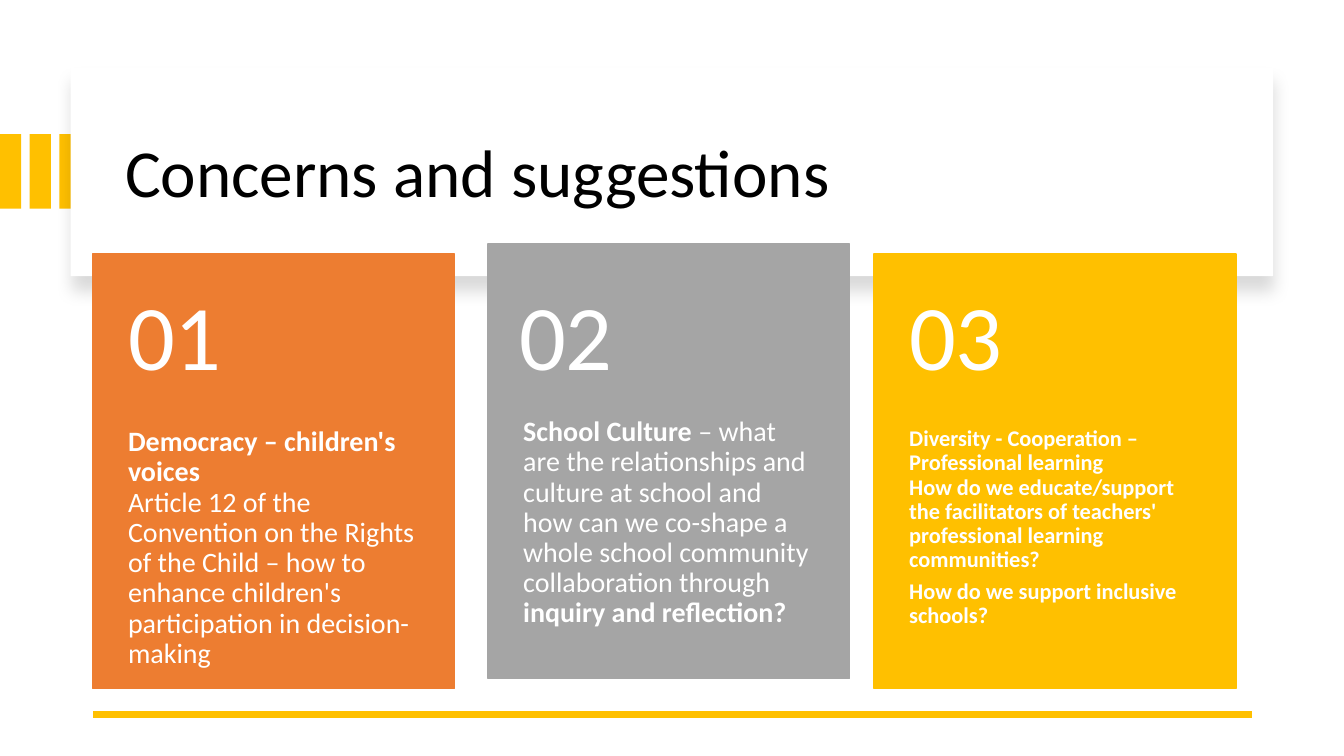
from dataclasses import dataclass

from lxml.etree import SubElement
from pptx import Presentation
from pptx.dml.color import RGBColor
from pptx.enum.shapes import MSO_CONNECTOR, MSO_SHAPE
from pptx.enum.text import MSO_ANCHOR, MSO_AUTO_SIZE, PP_ALIGN
from pptx.oxml.ns import qn
from pptx.util import Inches, Pt

WHITE = RGBColor(0xFF, 0xFF, 0xFF)
BLACK = RGBColor(0x00, 0x00, 0x00)
ORANGE = RGBColor(0xED, 0x7D, 0x31)
GRAY = RGBColor(0xA5, 0xA5, 0xA5)
GOLD = RGBColor(0xFF, 0xC0, 0x00)

FONT = "Calibri"
CELL = Inches(0.1)  # the grid has square cells, 133.33 columns by 75 rows
LINE_SPACING = 0.9
CARD_WIDTH, CARD_HEIGHT = 35.9, 43.1
NUMBER_HEIGHT, BODY_HEIGHT = 17.2, 25.9
NUMBER_ROW = 25.2
SIDE_INSET = 3.5


@dataclass(frozen=True)
class Area:
    """A rectangle in grid columns and rows."""
    column: float
    row: float
    width: float
    height: float

    def lengths(self) -> list[int]:
        return [grid(n) for n in (self.column, self.row, self.width, self.height)]


@dataclass(frozen=True)
class Span:
    text: str
    bold: bool = False
    break_after: bool = False


@dataclass(frozen=True)
class Card:
    number: str
    color: RGBColor
    column: float
    row: float
    number_column: float
    size: int
    paragraphs: list[list[Span]]


CARDS = [
    Card("01", ORANGE, 9.2, 25.2, 9.2, 20, [[
        Span("Democracy – children's voices", True, True),
        Span("Article 12 of the Convention on the Rights of the Child – how to "
             "enhance children's participation in decision-making"),
    ]]),
    Card("02", GRAY, 48.4, 24.2, 48, 20, [[
        Span("School Culture ", True),
        Span("– what are the relationships and culture at school and how can we "
             "co-shape a whole school community collaboration through "),
        Span("inquiry and reflection?", True),
    ]]),
    Card("03", GOLD, 86.7, 25.2, 86.7, 16, [
        [Span("Diversity - Cooperation – Professional learning", True, True),
         Span("How do we educate/support the facilitators of teachers' "
              "professional learning communities?", True)],
        [Span("How do we support inclusive schools?", True)],
    ]),
]


def grid(count: float) -> int:
    return round(count * CELL)


def apply_format(target, values: dict) -> None:
    for name, value in values.items():
        setattr(target, name, value)


def format_font(font, size: int, color: RGBColor, bold: bool = False) -> None:
    apply_format(font, {"name": FONT, "size": Pt(size), "bold": bold})
    font.color.rgb = color


def add_rectangle(page, area: Area, color: RGBColor, outlined: bool = False):
    box = page.shapes.add_shape(MSO_SHAPE.RECTANGLE, *area.lengths())
    box.shadow.inherit = False
    box.fill.solid()
    box.fill.fore_color.rgb = color
    if outlined:
        box.line.color.rgb = color
        box.line.width = Pt(1)
    else:
        box.line.fill.background()
    return box


def add_soft_shadow(box) -> None:
    effects = box._element.spPr.find(qn("a:effectLst"))
    shadow = SubElement(effects, qn("a:outerShdw"), blurRad=str(Pt(11)),
                        dist=str(Pt(10)), dir="5400000", rotWithShape="0")
    color = SubElement(shadow, qn("a:srgbClr"), val=str(BLACK))
    SubElement(color, qn("a:alpha"), val="15000")


def add_text(page, area: Area, paragraphs: list[list[Span]], size: int,
             anchor: MSO_ANCHOR, top: float, bottom: float) -> None:
    frame = page.shapes.add_textbox(*area.lengths()).text_frame
    apply_format(frame, {
        "word_wrap": True, "vertical_anchor": anchor,
        "margin_left": grid(SIDE_INSET), "margin_right": grid(SIDE_INSET),
        "margin_top": grid(top), "margin_bottom": grid(bottom),
    })
    for index, spans in enumerate(paragraphs):
        para = frame.add_paragraph() if index else frame.paragraphs[0]
        apply_format(para, {"line_spacing": LINE_SPACING,
                            "space_after": Pt(size * 0.35),
                            "alignment": PP_ALIGN.LEFT})
        for span in spans:
            run = para.add_run()
            run.text = span.text
            format_font(run.font, size, WHITE, span.bold)
            if span.break_after:
                para.add_line_break()


def add_header(page) -> None:
    for index in range(3):
        add_rectangle(page, Area(2.95 * index, 13.3, 2.1, 7.4), GOLD)
    add_soft_shadow(add_rectangle(page, Area(7, 6.7, 119.3, 20.7), WHITE))

    title = page.shapes.title
    title.element.getparent().append(title.element)  # in front of the panel
    area = Area(11.4, 8.9, 111.3, 17)
    apply_format(title, dict(zip(("left", "top", "width", "height"), area.lengths())))
    title.text = "Concerns and suggestions"
    apply_format(title.text_frame, {"vertical_anchor": MSO_ANCHOR.MIDDLE,
                                    "auto_size": MSO_AUTO_SIZE.NONE,
                                    "word_wrap": True})
    para = title.text_frame.paragraphs[0]
    apply_format(para, {"alignment": PP_ALIGN.LEFT, "line_spacing": LINE_SPACING})
    format_font(para.runs[0].font, 48, BLACK)


def add_base_line(page) -> None:
    line = page.shapes.add_connector(
        MSO_CONNECTOR.STRAIGHT, grid(124.2), grid(70.9), grid(9.2), grid(70.9))
    line.line.color.rgb = GOLD
    line.line.width = Pt(4.5)
    SubElement(line._element.spPr, qn("a:effectLst"))


def add_card(page, card: Card) -> None:
    add_rectangle(page, Area(card.column, card.row, CARD_WIDTH, CARD_HEIGHT),
                  card.color, outlined=True)
    body = Area(card.column, card.row + NUMBER_HEIGHT, CARD_WIDTH, BODY_HEIGHT)
    add_text(page, body, card.paragraphs, card.size, MSO_ANCHOR.TOP, 0, 3.6)
    number = Area(card.number_column, NUMBER_ROW, CARD_WIDTH, NUMBER_HEIGHT)
    add_text(page, number, [[Span(card.number)]], 66, MSO_ANCHOR.MIDDLE, 1.8, 1.8)


def main() -> None:
    deck = Presentation()
    apply_format(deck, {"slide_width": grid(133.33), "slide_height": grid(75)})
    page = deck.slides.add_slide(deck.slide_layouts.get_by_name("Title Only"))
    add_header(page)
    add_base_line(page)
    for card in CARDS:
        add_card(page, card)
    deck.save("out.pptx")


if __name__ == "__main__":
    main()
